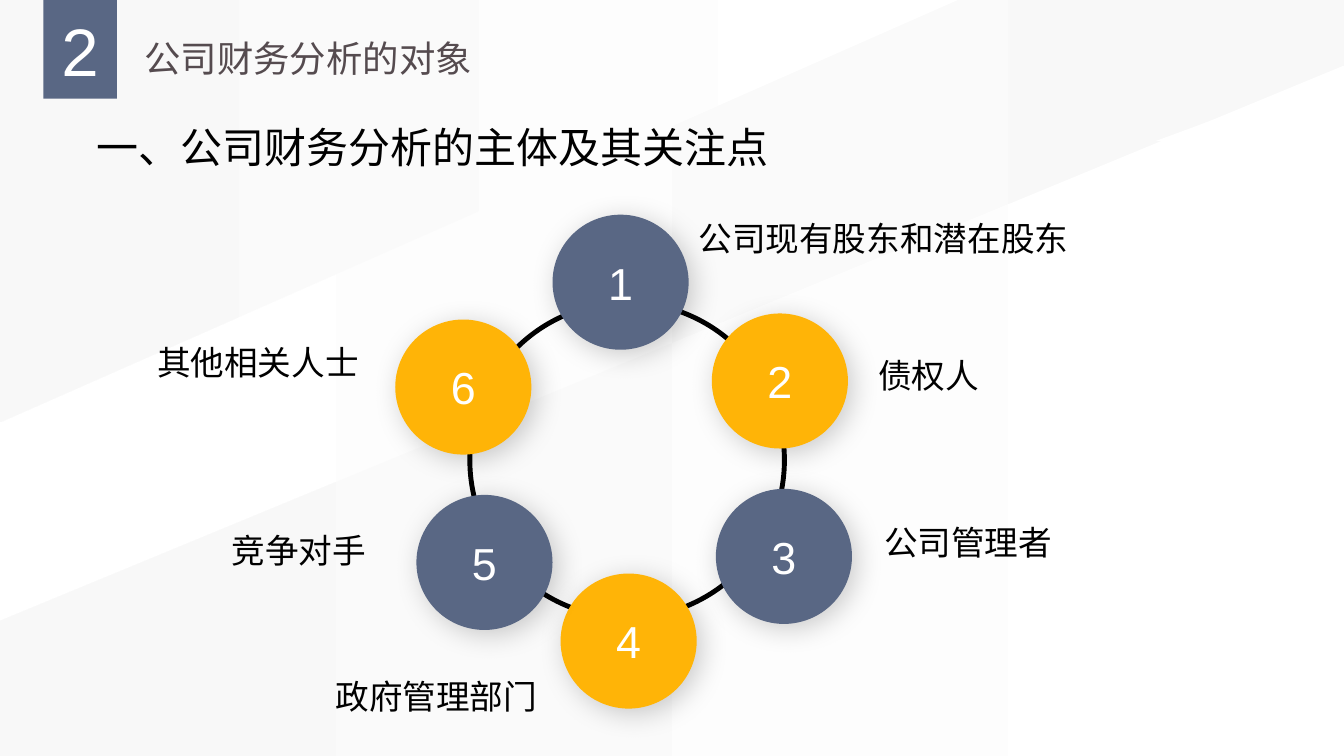
from lxml import etree
from pptx import Presentation
from pptx import util as u
from pptx.dml import color
from pptx.enum import shapes, text
from pptx.oxml import ns

COLORS = {"slate": "596784", "amber": "FFB407", "white": "FFFFFF", "pale": "F8F8F8",
          "black": "000000", "heading": "554B4F"}
LATIN, CHINESE = "Arial", "Noto Sans CJK SC"
CIRCLE = 1.35
STAKEHOLDERS = [
    ("公司现有股东和潜在股东", (5.48, 2.13), (6.83, 2.11, 4.29, 0.5)),
    ("债权人", (7.06, 3.11), (8.61, 3.47, 1.35, 0.5)),
    ("公司管理者", (7.1, 4.85), (8.67, 5.13, 1.87, 0.5)),
    ("政府管理部门", (5.56, 5.69), (3.23, 6.66, 2.33, 0.5)),
    ("竞争对手", (4.13, 4.91), (2.2, 5.21, 1.55, 0.5)),
    ("其他相关人士", (3.92, 3.17), (1.46, 3.34, 2.25, 0.5)),
]


def rgb(name):
    """Return the named colour."""
    return color.RGBColor.from_string(COLORS[name])


def inches(box):
    """Convert numbers to lengths."""
    return [u.Inches(value) for value in box]


def write(shape, content, size, ink, font=CHINESE, align=text.PP_ALIGN.LEFT):
    """Write one formatted paragraph and return it."""
    shape.text_frame.text = content
    paragraph = shape.text_frame.paragraphs[0]
    paragraph.alignment = align
    run = paragraph.runs[0]
    run.font.size = u.Pt(size)
    run.font.name = font
    run.font.color.rgb = rgb(ink)
    etree.SubElement(run.font._element, ns.qn("a:ea"), typeface=font)
    return paragraph


def add_label(slide, box, content, size, ink="black", **style):
    """Add a wrapping text box and return its shape and paragraph."""
    shape = slide.shapes.add_textbox(*inches(box))
    shape.text_frame.word_wrap = True
    return shape, write(shape, content, size, ink, **style)


def add_plain(slide, kind, box, fill):
    """Add a flat shape without outline."""
    shape = slide.shapes.add_shape(kind, *inches(box))
    shape.shadow.inherit = False
    shape.fill.solid()
    shape.fill.fore_color.rgb = rgb(fill)
    shape.line.fill.background()
    return shape


def shade(shape, right, left):
    """Fill a background shape with a horizontal gradient."""
    shape.shadow.inherit = False
    shape.line.fill.background()
    shape.fill.gradient()
    shape.fill.gradient_angle = 180
    for stop, name, position in zip(shape.fill.gradient_stops, (right, left), (0, 1)):
        stop.color.rgb = rgb(name)
        stop.position = position


def add_backdrop(slide, box):
    """Draw the pale diagonal planes over the given box."""
    left, top, width, height = box
    right, bottom = left + width, top + height
    shade(add_plain(slide, shapes.MSO_SHAPE.RECTANGLE, box, "pale"), "pale", "white")
    planes = [
        ([(left, top), (left + 9.5, top), (left, top + 4.19)], "pale"),
        ([(left, top + 6.16), (right, top + 0.65), (right, bottom), (left, bottom)], "pale"),
        ([(right - 1.87, top + 1.4), (right, top + 0.71), (right, top + 1.4)], "white"),
    ]
    for points, edge in planes:
        corners = [inches(point) for point in points]
        builder = slide.shapes.build_freeform(*corners[0])
        builder.add_line_segments(corners[1:], close=True)
        shade(builder.convert_to_shape(), "white", edge)


def add_header(slide, box):
    """Place the chapter number block and the slide title."""
    left, top, width, height = box
    title = slide.shapes.title
    title.element.getparent().append(title.element)
    title.left, title.top, title.width, title.height = inches((left + 0.9, top + 0.18, 3.48, 0.62))
    frame = title.text_frame
    frame.word_wrap = False
    frame.auto_size = text.MSO_AUTO_SIZE.NONE
    frame.vertical_anchor = text.MSO_ANCHOR.TOP
    write(title, "公司财务分析的对象", 26, "heading").line_spacing = 1.3
    add_plain(slide, shapes.MSO_SHAPE.RECTANGLE, box, "slate")
    number, _ = add_label(slide, (left, top + 0.09, width, 0.81), "2", 48, "white",
                          font=LATIN, align=text.PP_ALIGN.CENTER)
    frame = number.text_frame
    frame.margin_left = frame.margin_right = frame.margin_top = frame.margin_bottom = 0


def add_soft_shadow(shape):
    """Give a shape a soft shadow falling to the lower right."""
    effects = shape.element.spPr.find(ns.qn("a:effectLst"))
    shadow = etree.SubElement(effects, ns.qn("a:outerShdw"), blurRad=str(u.Pt(20)),
                              dist=str(u.Pt(5)), dir="2700000", algn="tl", rotWithShape="0")
    ink = etree.SubElement(shadow, ns.qn("a:srgbClr"), val=COLORS["black"])
    etree.SubElement(ink, ns.qn("a:alpha"), val="20000")


def add_cycle(slide, box):
    """Draw the ring with its numbered circles and labels."""
    ring = add_plain(slide, shapes.MSO_SHAPE.OVAL, box, "white")
    ring.fill.background()
    ring.line.color.rgb = rgb("black")
    ring.line.width = u.Pt(3.5)
    for number, (label, corner, label_box) in enumerate(STAKEHOLDERS, 1):
        fill = "slate" if number % 2 else "amber"
        circle = add_plain(slide, shapes.MSO_SHAPE.OVAL, (*corner, CIRCLE, CIRCLE - 0.01), fill)
        add_soft_shadow(circle)
        circle.text_frame.vertical_anchor = text.MSO_ANCHOR.MIDDLE
        paragraph = write(circle, str(number), 32, "white", LATIN, text.PP_ALIGN.CENTER)
        paragraph.runs[0].font._element.set("spc", "-200")
        add_label(slide, label_box, label, 24)


def add_section_heading(slide, box):
    """Place the section heading above the cycle."""
    _, paragraph = add_label(slide, box, "一、公司财务分析的主体及其关注点", 30,
                             align=text.PP_ALIGN.JUSTIFY)
    paragraph.space_before = u.Pt(9)
    paragraph.space_after = u.Pt(5)


def main():
    """Build and save the slide."""
    presentation = Presentation()
    presentation.slide_width, presentation.slide_height = inches((13.33, 7.5))
    slide = presentation.slides.add_slide(presentation.slide_layouts[5])
    add_backdrop(slide, (0, 0, 13.33, 7.5))
    add_header(slide, (0.43, 0, 0.73, 0.98))
    add_cycle(slide, (4.66, 3, 3.12, 3.13))
    add_section_heading(slide, (0.86, 1.16, 6.93, 0.61))
    presentation.save("out.pptx")


if __name__ == "__main__":
    main()
